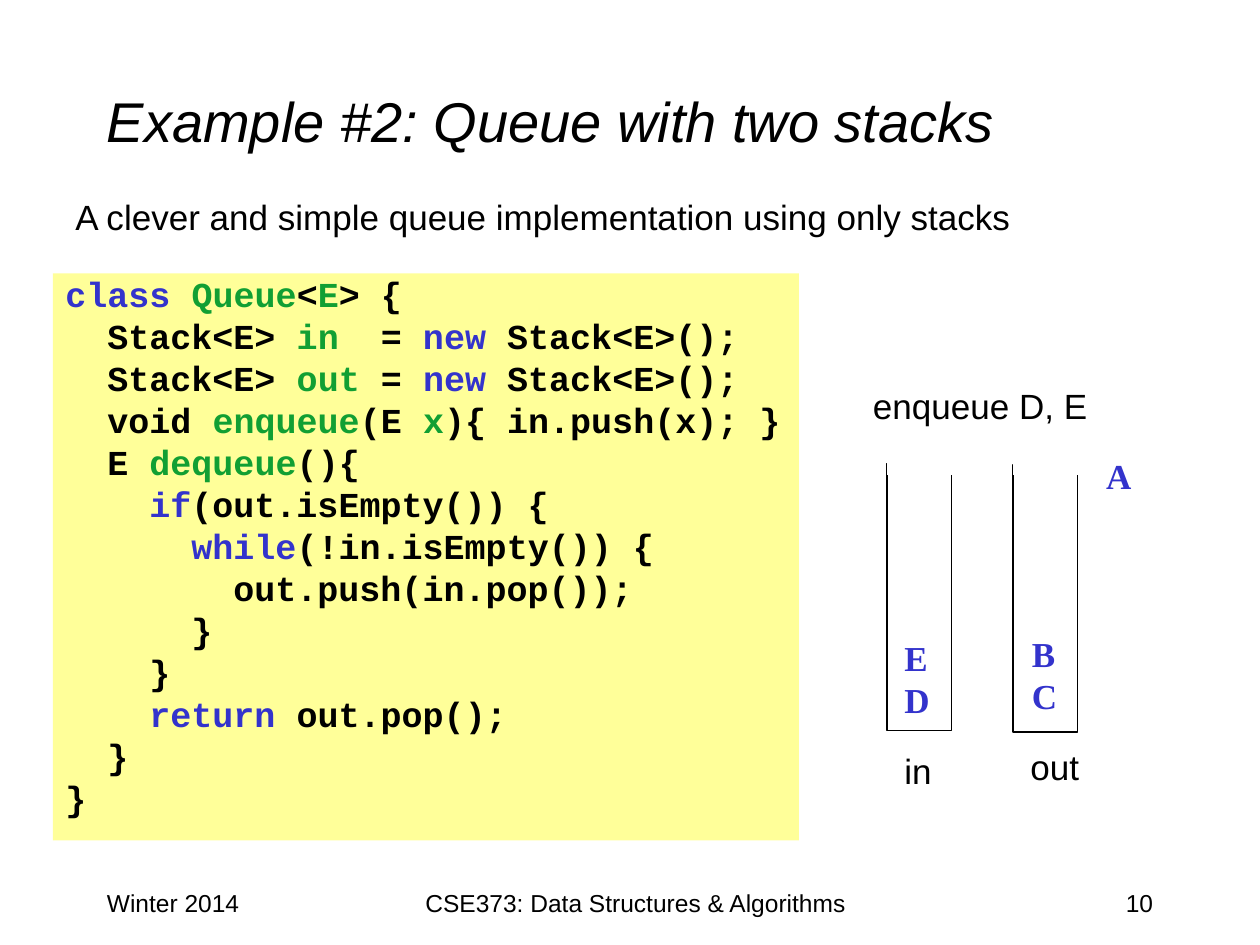
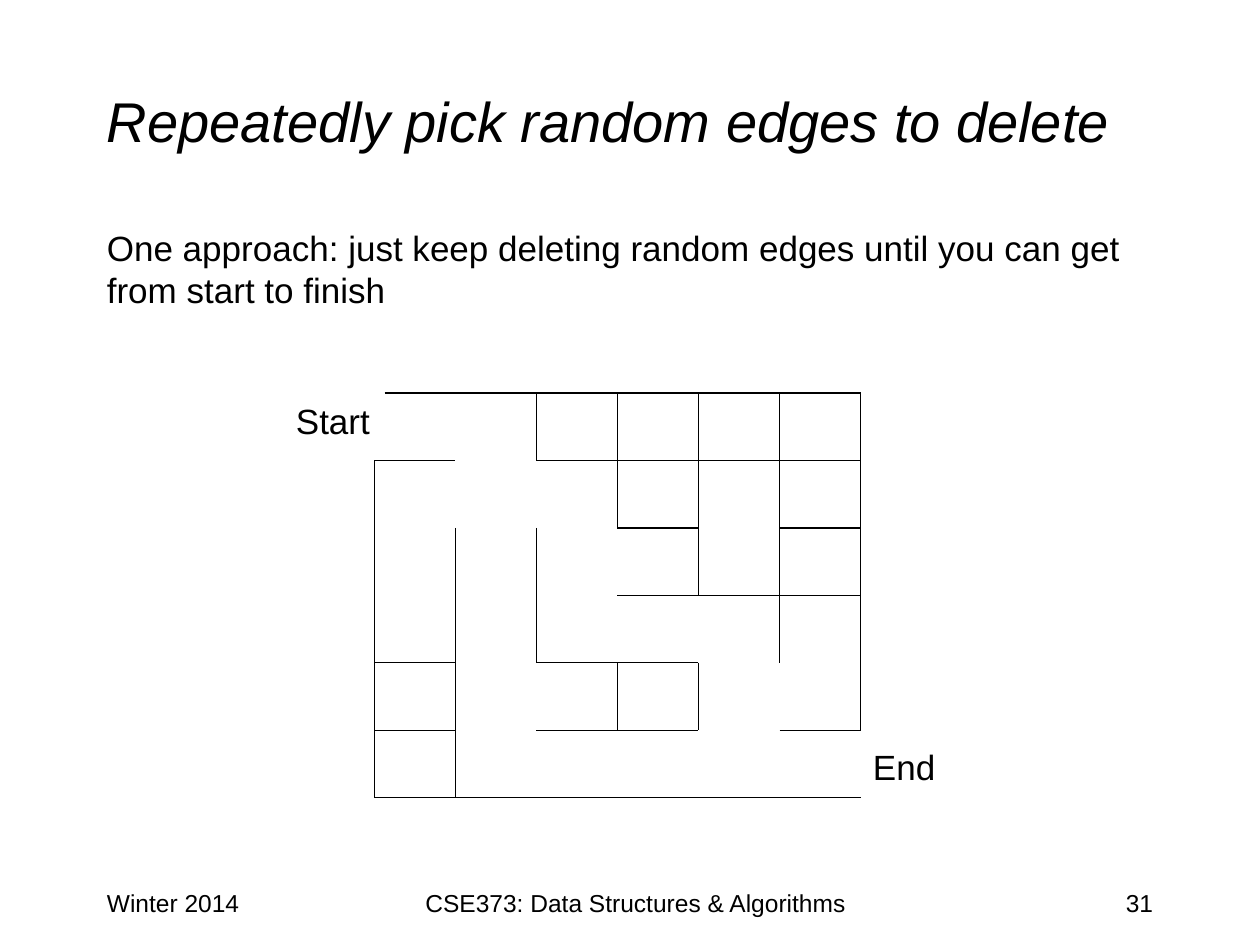
from pptx import Presentation
from pptx.dml.color import RGBColor
from pptx.enum.shapes import MSO_CONNECTOR, MSO_SHAPE
from pptx.enum.text import MSO_ANCHOR, PP_ALIGN
from pptx.oxml.ns import qn
from pptx.util import Inches, Pt

RECT, LINE = MSO_SHAPE.RECTANGLE, MSO_CONNECTOR.STRAIGHT
LEFT, CENTER, RIGHT = PP_ALIGN.LEFT, PP_ALIGN.CENTER, PP_ALIGN.RIGHT
TOP, MIDDLE = MSO_ANCHOR.TOP, MSO_ANCHOR.MIDDLE

# Shared styles
BLACK, WHITE, YELLOW = "000000", "FFFFFF", "FFFF99"
BLUE, GREEN = "3333CC", "119F33"
BODY = dict(name="Arial", size=Pt(20))
TITLE = dict(name="Arial", size=Pt(32), italic=True)
FOOTER = dict(name="Arial", size=Pt(14))
CODE = dict(name="Courier New", size=Pt(20), bold=True)
ITEM = dict(name="Times New Roman", size=Pt(20), bold=True)
CODE_CHAR = 1 / 6  # width in inches of one 20 pt Courier character

# Slide 1: `keyword` is blue, ~name~ is green
QUEUE_TITLE = "Example #2: Queue with two stacks"
QUEUE_INTRO = "A clever and simple queue implementation using only stacks"
QUEUE_CODE = """\
`class` ~Queue~<~E~> {
  Stack<E> ~in~  = `new` Stack<E>();
  Stack<E> ~out~ = `new` Stack<E>();
  void ~enqueue~(E ~x~){ in.push(x); }
  E ~dequeue~(){
    `if`(out.isEmpty()) {
      `while`(!in.isEmpty()) {
        out.push(in.pop());
      }
    }
    `return` out.pop();
  }
}"""
STACKS = [(8.04, 3.69), (7.04, 3.68)]  # left, top
STACK_LABELS = [("in", 7.08, 5.9, 0.42), ("out", 8.08, 5.87, 0.59),
                ("enqueue D, E", 6.83, 3, 1.92)]
STACK_ITEMS = [("BC", 8.09, 4.97), ("A", 8.68, 3.56), ("ED", 7.08, 5)]

# Slide 2: walls on a 6 by 6 grid, in grid units
MAZE_TITLE = "Repeatedly pick random edges to delete"
MAZE_INTRO = ("One approach: just keep deleting random edges until you can get "
              "from start to finish")
MAZE_LEFT, MAZE_TOP, CELL_W, CELL_H = 2.97, 3.12, 3.86 / 6, 3.21 / 6
FLOORS = ["12345", "0 2345", "3 5", "345", "0 23", "0 23 5"]  # columns, per grid line
SIDES = ["23456", "3456", "12 456", "12 56", "1 34 6", "1"]  # grid lines, per row
OUTER = [(5, 6, 0, 6), (0, 6, 0, 1), (0.13, 0, 1.13, 0), (5, 6, 6, 6)]
MAZE_LABELS = [("Start", 2.25, 3.12, 0.79), ("End", 6.83, 5.87, 0.7)]


def rgb(value):
    return RGBColor.from_string(value)


def add_run(p, text, style, color=BLACK):
    r = p.add_run()
    r.text = text
    for key, value in style.items():
        setattr(r.font, key, value)
    r.font.color.rgb = rgb(color)


def add_text(s, lines, x, y, w, h, style, color=BLACK, align=LEFT, anchor=TOP,
             wrap=True):
    tf = s.shapes.add_textbox(Inches(x), Inches(y), Inches(w), Inches(h)).text_frame
    tf.word_wrap, tf.vertical_anchor = wrap, anchor
    for i, line in enumerate(lines):
        p = tf.paragraphs[0] if i == 0 else tf.add_paragraph()
        p.alignment = align
        add_run(p, line, style, color)


def add_rect(s, x, y, w, h, fill=None, line=None):
    sp = s.shapes.add_shape(RECT, Inches(x), Inches(y), Inches(w), Inches(h))
    sp.shadow.inherit = False
    if fill:
        sp.fill.solid()
        sp.fill.fore_color.rgb = rgb(fill)
    else:
        sp.fill.background()
    if line:
        sp.line.color.rgb, sp.line.width = rgb(line), Pt(0.75)
    else:
        sp.line.fill.background()
    return sp


def add_wall(s, c1, r1, c2, r2):
    xs = [Inches(MAZE_LEFT + c * CELL_W) for c in (c1, c2)]
    ys = [Inches(MAZE_TOP + r * CELL_H) for r in (r1, r2)]
    cx = s.shapes.add_connector(LINE, xs[0], ys[0], xs[1], ys[1])
    cx.line.color.rgb, cx.line.width = rgb(BLACK), Pt(0.75)
    sp_pr = cx._element.spPr
    sp_pr.append(sp_pr.makeelement(qn("a:effectLst"), {}))


def add_code(s, code, x, y, w, h):
    tf = add_rect(s, x, y, w, h, YELLOW).text_frame
    tf.word_wrap, tf.vertical_anchor = True, TOP
    for i, line in enumerate(code.split("\n")):
        p = tf.paragraphs[0] if i == 0 else tf.add_paragraph()
        p.alignment, p.line_spacing, p.space_before = LEFT, Pt(20), Pt(4)
        text = line.lstrip()
        indent = Inches((len(line) - len(text)) * CODE_CHAR)
        p._p.get_or_add_pPr().set("marL", str(int(indent)))
        for j, part in enumerate(text.split("`")):
            for k, piece in enumerate(part.split("~")):
                if piece:
                    color = BLUE if j % 2 else GREEN if k % 2 else BLACK
                    add_run(p, piece, CODE, color)


def new_slide(title, number):
    s = prs.slides.add_slide(prs.slide_layouts[6])
    add_text(s, [title], 0.75, 0.33, 8.5, 1.25, TITLE, anchor=MIDDLE)
    for text, x, w, align in [("Winter 2014", 0.75, 2.08, LEFT),
                              (number, 7.17, 2.08, RIGHT),
                              ("CSE373: Data Structures & Algorithms", 3.17, 3.75, CENTER)]:
        add_text(s, [text], x, 7, w, 0.5, FOOTER, align=align)
    return s


prs = Presentation()
prs.slide_width, prs.slide_height = Inches(10), Inches(7.5)

# Slide 1: code beside the two stacks
s = new_slide(QUEUE_TITLE, "10")
add_text(s, [QUEUE_INTRO], 0.5, 1.5, 8.5, 0.58, BODY)
add_code(s, QUEUE_CODE, 0.42, 2.17, 5.92, 4.5)
for x, y in STACKS:
    add_rect(s, x, y, 0.51, 2.12, line=BLACK)
    add_rect(s, x, 3.65, 0.55, 0.12, fill=WHITE)  # opens the top
for text, x, y, w in STACK_LABELS:
    add_text(s, [text], x, y, w, 0.44, BODY, wrap=False)
for items, x, y in STACK_ITEMS:
    add_text(s, items, x, y, 0.41, 0.1 + 0.34 * len(items), ITEM, BLUE, wrap=False)

# Slide 2: the maze
s = new_slide(MAZE_TITLE, "31")
add_text(s, [MAZE_INTRO], 0.75, 1.75, 8.5, 4.92, BODY)
for row, (floors, sides) in enumerate(zip(FLOORS, SIDES)):
    for c in map(int, floors.replace(" ", "")):
        add_wall(s, c, row, c + 1, row)
    for c in map(int, sides.replace(" ", "")):
        add_wall(s, c, row, c, row + 1)
for wall in OUTER:
    add_wall(s, *wall)
for text, x, y, w in MAZE_LABELS:
    add_text(s, [text], x, y, w, 0.44, BODY, wrap=False)

prs.save("out.pptx")
